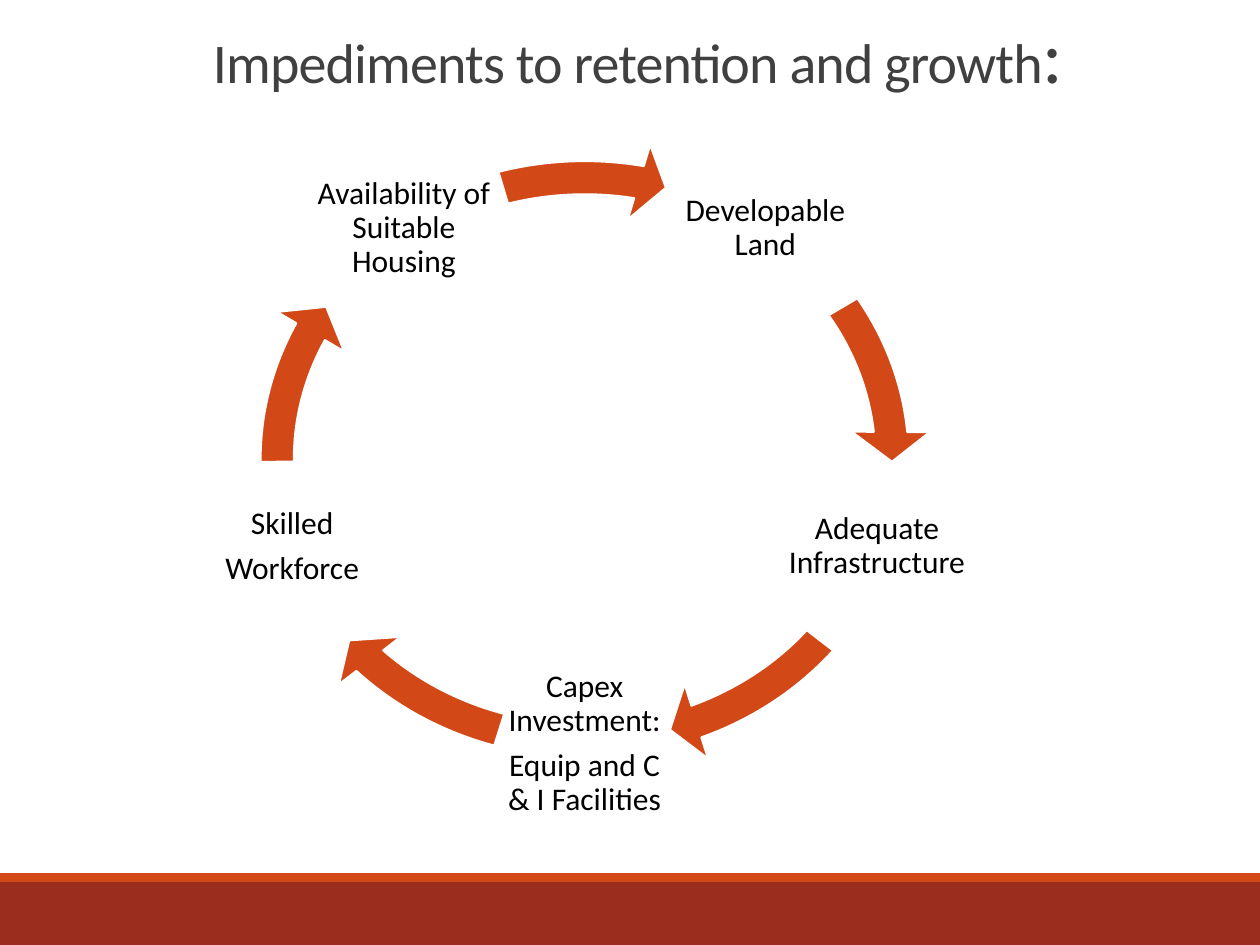
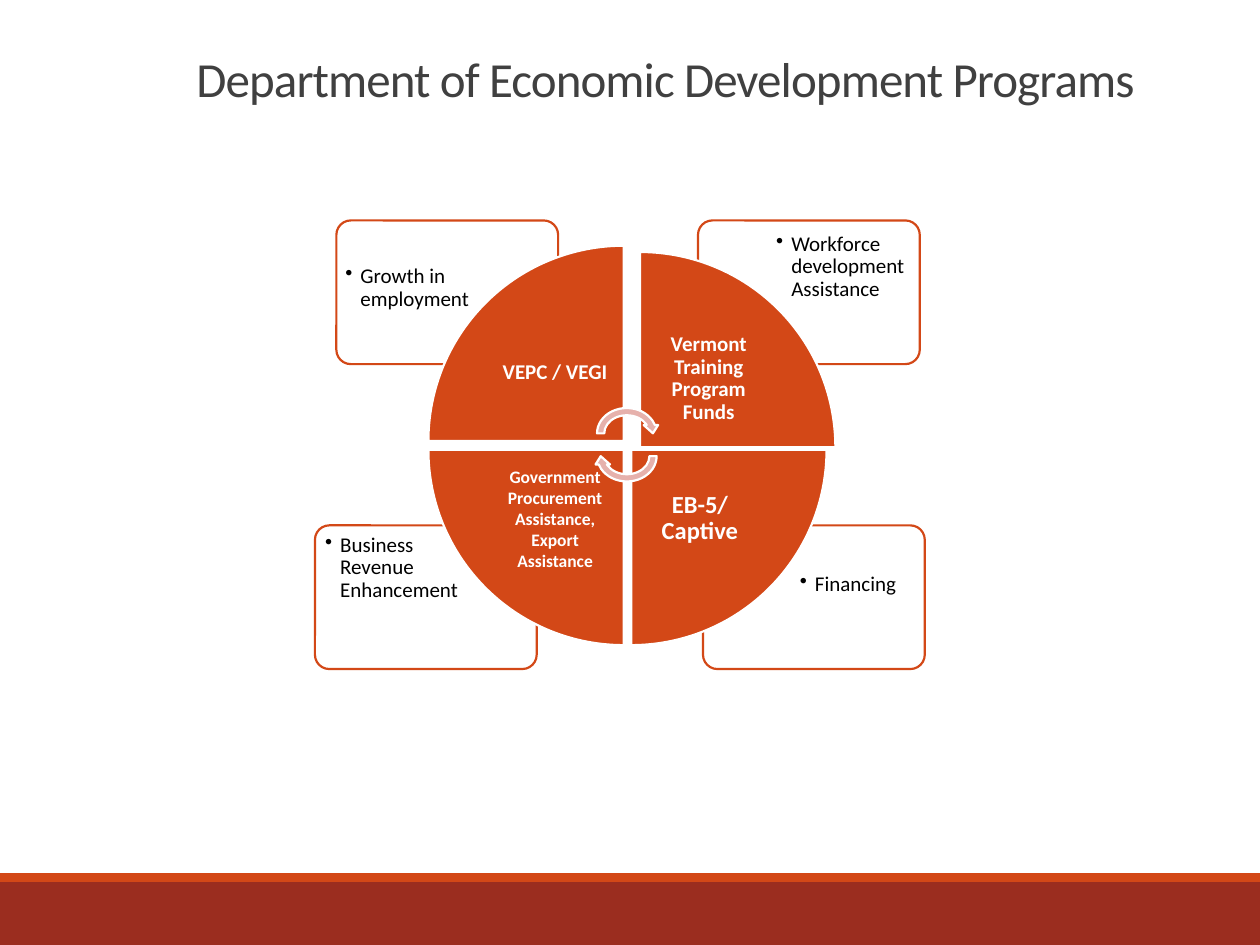
from math import cos, radians, sin

from lxml import etree
from pptx import Presentation
from pptx.dml.color import RGBColor
from pptx.enum.shapes import MSO_SHAPE
from pptx.enum.text import MSO_ANCHOR, MSO_AUTO_SIZE, PP_ALIGN
from pptx.oxml.ns import qn
from pptx.util import Inches, Pt

COLORS = {
    "orange": "D34817",
    "brick": "9B2D1F",
    "pink": "E6B1AC",
    "white": "FFFFFF",
    "black": "000000",
    "title": "404040",
}
FONT = "Calibri"
LINE_WIDTH = 1.25

# Cycle of impediments: ellipse through the label centres, clockwise
CYCLE_CENTER = (4.64, 3.64)
CYCLE_RADII = (2.44, 2.26)
LABEL_SIZE = (1.47, 1.36)
ARROW_BOX = (1.89, 1.1, 5.5, 5.09)
IMPEDIMENTS = [
    # label paragraphs, start and end angle of the arrow before it
    (["Developable Land"], 253.31, 281.09),
    (["Adequate Infrastructure"], 329.44, 354.88),
    (["Capex Investment:", "Equip and C & I Facilities"], 37.56, 66.9),
    (["Skilled", "Workforce"], 107.5, 136.84),
    (["Availability of Suitable Housing"], 179.52, 204.96),
]

# Program cards: left, top, text offset x and y, inset, alignment, text
CARD_SIZE = (1.76, 1.14)
CARD_TEXT_SIZE = (1.18, 0.81)
CARDS = [
    (5.58, 4.17, 0.56, 0.31, 0.07, PP_ALIGN.CENTER, "Financing"),
    (2.67, 1.75, 0.02, 0.31, 0.05, PP_ALIGN.LEFT, "Growth in employment"),
    (5.54, 1.75, 0.55, 0.03, 0.07, PP_ALIGN.LEFT,
     "Workforce development Assistance"),
    (2.5, 4.17, 0.03, 0.02, 0.05, PP_ALIGN.LEFT,
     "Business Revenue Enhancement"),
]

# Wheel quarters, clockwise: left, top, inset, size, line spacing, text
WEDGE = 1.55
WEDGE_TEXT = 1.09
QUARTERS = [
    (3.4, 1.95, 0.09, 12, 0.9, "VEPC / VEGI"),
    (5.08, 2, 0.09, 12, 0.9, "Vermont Training Program Funds"),
    (5.01, 3.57, 0.11, 14, 0.9, "EB-5/Captive"),
    (3.4, 3.57, 0.08, 10, 1.0,
     "Government Procurement Assistance, Export Assistance"),
]


def color(name):
    return RGBColor.from_string(COLORS[name])


def add_shape(slide, kind, box, fill, line=None, rotation=0):
    shape = slide.shapes.add_shape(kind, *map(Inches, box))
    shape.shadow.inherit = False
    shape.rotation = rotation
    shape.fill.solid()
    shape.fill.fore_color.rgb = color(fill)
    if line:
        shape.line.color.rgb = color(line)
        shape.line.width = Pt(LINE_WIDTH)
    else:
        shape.line.fill.background()
    return shape


def set_frame(frame, inset, anchor):
    frame.word_wrap = True
    frame.auto_size = MSO_AUTO_SIZE.NONE
    frame.vertical_anchor = anchor
    frame.margin_left = frame.margin_right = Inches(inset)
    frame.margin_top = frame.margin_bottom = Inches(inset)


def add_bullet(paragraph):
    properties = paragraph._p.get_or_add_pPr()
    properties.set("marL", str(Inches(0.12)))
    properties.set("indent", str(-Inches(0.12)))
    etree.SubElement(properties, qn("a:buChar")).set("char", "•")


def add_text(slide, box, lines, size, inset, ink="black", bold=False,
             anchor=MSO_ANCHOR.MIDDLE, align=PP_ALIGN.CENTER,
             spacing=0.9, gap=0.35, bullet=False):
    frame = slide.shapes.add_textbox(*map(Inches, box)).text_frame
    set_frame(frame, inset, anchor)
    for index, line in enumerate(lines):
        paragraph = frame.add_paragraph() if index else frame.paragraphs[0]
        paragraph.text = line
        if bullet:
            add_bullet(paragraph)
        paragraph.alignment = align
        paragraph.line_spacing = spacing
        paragraph.space_after = Pt(size * gap)
        paragraph.font.name = FONT
        paragraph.font.size = Pt(size)
        paragraph.font.bold = bold
        paragraph.font.color.rgb = color(ink)


def set_title(slide, box, runs, align):
    title = slide.shapes.title
    title.left, title.top, title.width, title.height = map(Inches, box)
    frame = title.text_frame
    set_frame(frame, 0.05, MSO_ANCHOR.BOTTOM)
    frame.margin_left = frame.margin_right = Inches(0.1)
    paragraph = frame.paragraphs[0]
    paragraph.alignment = align
    paragraph.line_spacing = 0.85
    for text, size in runs:
        run = paragraph.add_run()
        run.text = text
        run.font.name = FONT
        run.font.size = Pt(size)
        run.font.color.rgb = color("title")
        run._r.get_or_add_rPr().set("spc", "-50")


def add_bands(slide):
    """Draw the bottom bands and move them to the layout all slides share."""
    layout_tree = slide.slide_layout.shapes.element
    for top, height, fill in [(7, 0.5, "brick"), (6.93, 0.07, "orange")]:
        band = add_shape(slide, MSO_SHAPE.RECTANGLE, (0, top, 10, height), fill)
        layout_tree.append(band.element)


def add_cycle_arrow(slide, start, end):
    arrow = add_shape(slide, MSO_SHAPE.CIRCULAR_ARROW, ARROW_BOX,
                      "orange", "white")
    # Angles are stored in 60000ths of a degree, adjustments in 100000ths
    values = (0.052, 5.6 * 0.6, end * 0.6, start * 0.6, 0.061)
    for index, value in enumerate(values):
        arrow.adjustments[index] = value


def add_cycle(slide):
    width, height = LABEL_SIZE
    for index, (lines, start, end) in enumerate(IMPEDIMENTS):
        angle = radians(72 * index - 54)
        left = CYCLE_CENTER[0] + CYCLE_RADII[0] * cos(angle) - width / 2
        top = CYCLE_CENTER[1] + CYCLE_RADII[1] * sin(angle) - height / 2
        add_text(slide, (left, top, width, height), lines, 18, 0.03)
        add_cycle_arrow(slide, start, end)


def add_cards(slide):
    for left, top, shift_x, shift_y, inset, align, text in CARDS:
        card = add_shape(slide, MSO_SHAPE.ROUNDED_RECTANGLE,
                         (left, top, *CARD_SIZE), "white", "orange")
        card.adjustments[0] = 0.1
        add_text(slide, (left + shift_x, top + shift_y, *CARD_TEXT_SIZE),
                 [text], 12, inset, anchor=MSO_ANCHOR.TOP, align=align,
                 gap=0.15, bullet=True)


def add_wheel(slide):
    inner = WEDGE - WEDGE_TEXT
    for index, (left, top, inset, size, spacing, text) in enumerate(QUARTERS):
        add_shape(slide, MSO_SHAPE.PIE_WEDGE, (left, top, WEDGE, WEDGE),
                  "orange", "white", rotation=90 * index)
        # Text sits in the corner nearest the hub
        text_left = left + (inner if index in (0, 3) else 0)
        text_top = top + (inner if index in (0, 1) else 0)
        add_text(slide, (text_left, text_top, WEDGE_TEXT, WEDGE_TEXT), [text],
                 size, inset, ink="white", bold=True, spacing=spacing)
    for top, rotation in [(3.21, 0), (3.39, 180)]:
        add_shape(slide, MSO_SHAPE.CIRCULAR_ARROW, (4.71, top, 0.53, 0.46),
                  "pink", "white", rotation)


def main():
    presentation = Presentation()
    presentation.slide_width = Inches(10)
    presentation.slide_height = Inches(7.5)
    title_only = presentation.slide_layouts[5]

    # Impediments
    slide = presentation.slides.add_slide(title_only)
    add_bands(slide)
    set_title(slide, (1.59, 0.14, 8.25, 0.7),
              [("Impediments to retention and growth", 32), (":", 44)],
              PP_ALIGN.LEFT)
    add_cycle(slide)

    # Programs
    slide = presentation.slides.add_slide(title_only)
    set_title(slide, (1.08, 0.3, 8.4, 0.6),
              [("Department of Economic Development Programs", 28)],
              PP_ALIGN.CENTER)
    add_cards(slide)
    add_wheel(slide)

    presentation.save("out.pptx")


if __name__ == "__main__":
    main()
